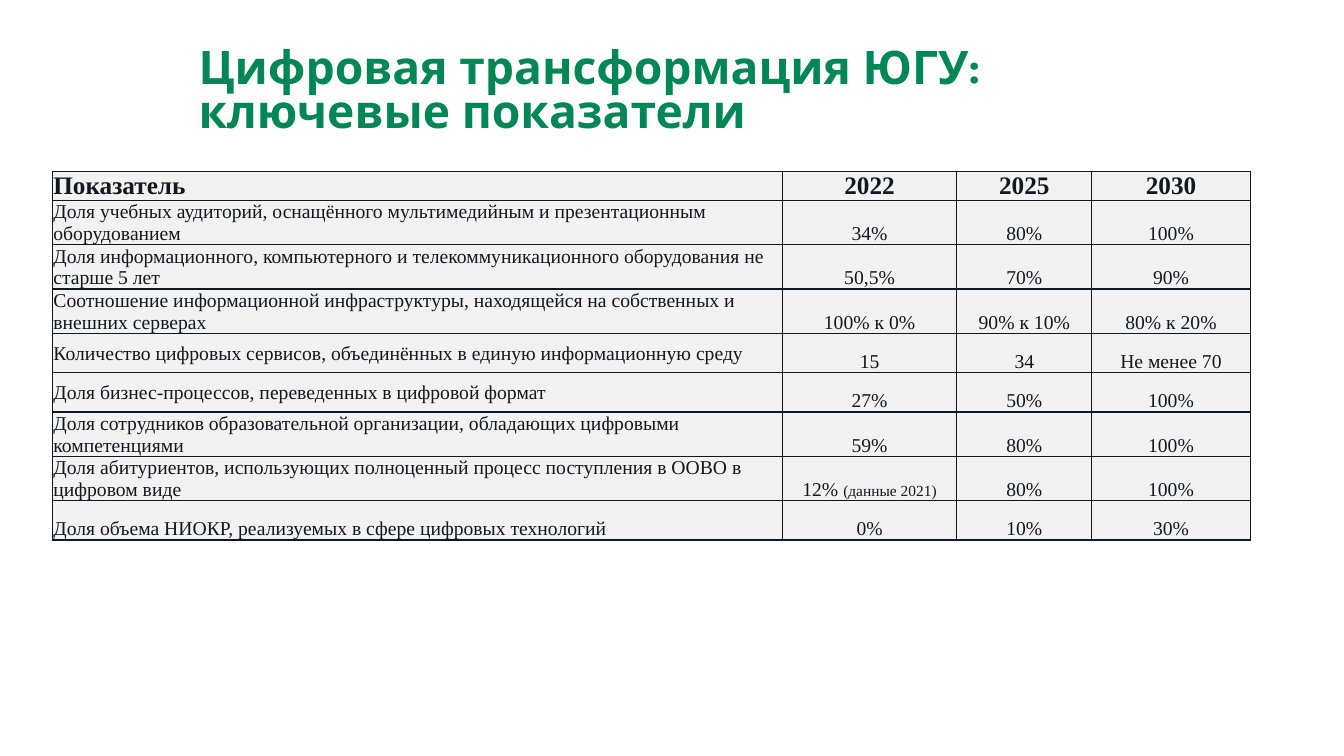
from lxml.etree import SubElement
from pptx import Presentation
from pptx.dml.color import RGBColor
from pptx.enum.text import MSO_ANCHOR, MSO_AUTO_SIZE, PP_ALIGN
from pptx.oxml.ns import qn
from pptx.util import Inches, Pt

COLORS = {"title": "008755", "ink": "101820", "cell": "F2F2F2"}
TITLE = "Цифровая трансформация ЮГУ: \vключевые показатели"
HEADER = ("Показатель", "2022", "2025", "2030")
INDICATORS = [
    ("Доля учебных аудиторий, оснащённого мультимедийным и презентационным оборудованием",
     "34%", "80%", "100%"),
    ("Доля информационного, компьютерного и телекоммуникационного оборудования не старше 5 лет",
     "50,5%", "70%", "90%"),
    ("Соотношение информационной инфраструктуры, находящейся на собственных и внешних серверах",
     "100% к 0%", "90% к 10%", "80% к 20%"),
    ("Количество цифровых сервисов, объединённых в единую информационную среду",
     "15", "34", "Не менее 70"),
    ("Доля бизнес-процессов, переведенных в цифровой формат",
     "27%", "50%", "100%"),
    ("Доля сотрудников образовательной организации, обладающих цифровыми компетенциями",
     "59%", "80%", "100%"),
    ("Доля абитуриентов, использующих полноценный процесс поступления в ООВО в цифровом виде",
     ("12% ", "(данные 2021)"), "80%", "100%"),
    ("Доля объема НИОКР, реализуемых в сфере цифровых технологий",
     "0%", "10%", "30%"),
]
COL_WIDTHS = (7.24, 1.73, 1.34, 1.57)
ROW_HEIGHTS = (0.22, 0.32, 0.32) + (0.39,) * 6
MIDDLE_ROWS = (4, 5)  # rows whose indicator name is centred vertically


def add_text(p, text, size, font="Times New Roman", color="ink", bold=False):
    for i, part in enumerate(text.split("\v")):
        if i:
            p.add_line_break()
        r = p.add_run()
        r.text = part
        r.font.name = font
        r.font.size = Pt(size)
        r.font.bold = bold
        r.font.color.rgb = RGBColor.from_string(COLORS[color])


def add_borders(cell, width=1):
    tcPr = cell._tc.get_or_add_tcPr()
    for i, side in enumerate(("lnL", "lnR", "lnT", "lnB")):
        ln = tcPr.makeelement(qn("a:" + side), {"w": str(Pt(width))})
        fill = SubElement(ln, qn("a:solidFill"))
        SubElement(fill, qn("a:srgbClr"), val=COLORS["ink"])
        tcPr.insert(i, ln)


def fill_cell(cell, content, row, col):
    cell.fill.solid()
    cell.fill.fore_color.rgb = RGBColor.from_string(COLORS["cell"])
    cell.margin_left = cell.margin_right = cell.margin_top = Inches(0.01)
    cell.margin_bottom = 0
    middle = col == 0 and row in MIDDLE_ROWS
    cell.vertical_anchor = MSO_ANCHOR.MIDDLE if middle else MSO_ANCHOR.BOTTOM
    p = cell.text_frame.paragraphs[0]
    p.alignment = PP_ALIGN.CENTER if col else PP_ALIGN.LEFT
    value, *note = (content,) if isinstance(content, str) else content
    add_text(p, value, 14 if row else 18, bold=row == 0)
    for text in note:
        add_text(p, text, 11)
    add_borders(cell)


prs = Presentation()
prs.slide_width, prs.slide_height = Inches(13.33), Inches(7.5)
s = prs.slides.add_slide(prs.slide_layouts[5])

title = s.shapes.title
title.left, title.top = Inches(1.87), Inches(0.4)
title.width, title.height = Inches(10.54), Inches(1.05)
tf = title.text_frame
tf.word_wrap = True
tf.auto_size = MSO_AUTO_SIZE.NONE
tf.vertical_anchor = MSO_ANCHOR.MIDDLE
p = tf.paragraphs[0]
p.alignment = PP_ALIGN.LEFT
p.line_spacing = 0.8
add_text(p, TITLE, 33, font="Karla", color="title", bold=True)

rows = [HEADER] + INDICATORS
table = s.shapes.add_table(len(rows), len(HEADER), Inches(0.52), Inches(1.7),
                           Inches(sum(COL_WIDTHS)), Inches(sum(ROW_HEIGHTS))).table
for column, width in zip(table.columns, COL_WIDTHS):
    column.width = Inches(width)
for i, (row, height) in enumerate(zip(rows, ROW_HEIGHTS)):
    table.rows[i].height = Inches(height)
    for j, content in enumerate(row):
        fill_cell(table.cell(i, j), content, i, j)

prs.save("out.pptx")
